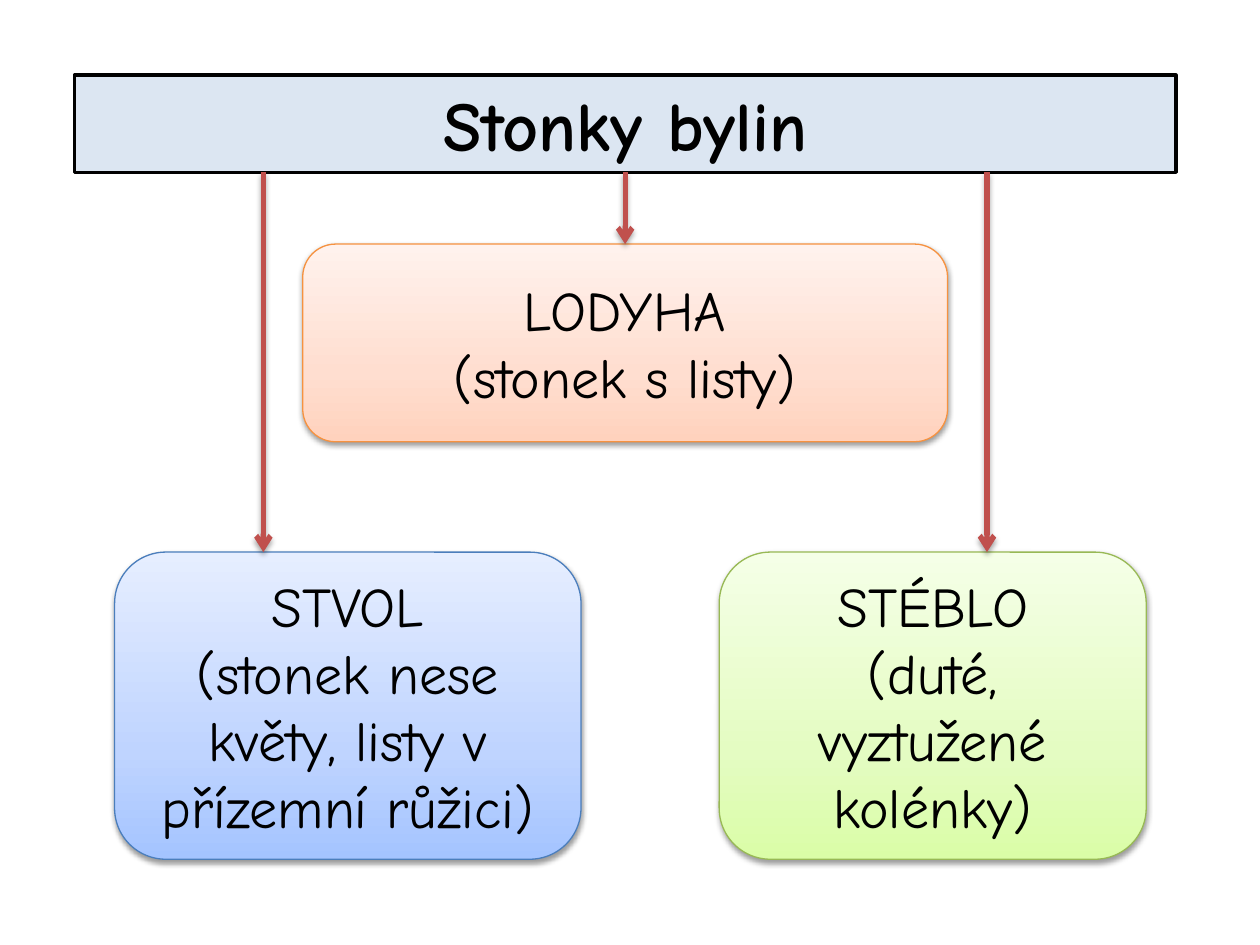
from copy import deepcopy
from dataclasses import dataclass

from lxml import etree
from pptx import Presentation
from pptx.dml.color import RGBColor
from pptx.enum.shapes import MSO_CONNECTOR, MSO_SHAPE
from pptx.enum.text import MSO_ANCHOR, MSO_AUTO_SIZE, PP_ALIGN
from pptx.oxml.ns import qn
from pptx.util import Pt

ROUNDED = MSO_SHAPE.ROUNDED_RECTANGLE
STRAIGHT = MSO_CONNECTOR.STRAIGHT
TOP, MIDDLE = MSO_ANCHOR.TOP, MSO_ANCHOR.MIDDLE
CENTER = PP_ALIGN.CENTER
NO_AUTOFIT = MSO_AUTO_SIZE.NONE

FONT = "Comic Neue"
TITLE_ONLY = 5
GRADIENT_POSITIONS = (0, 0.35, 1)
LOWER_TOP, LOWER_HEIGHT = 315.5, 175.5
UPPER_TOP = 139.5
TITLE_LEFT, TITLE_TOP, TITLE_WIDTH, TITLE_HEIGHT = 42.5, 43, 629.5, 55.5
TITLE_BOTTOM = TITLE_TOP + TITLE_HEIGHT

COLORS = {
    "black": "000000",
    "title": "DCE6F2",
    "arrow": "C0504D",
    "blue line": "4B7EBC",
    "orange line": "F69240",
    "green line": "98B955",
}
GRADIENTS = {
    "blue": ("A4C4FF", "BFD4FF", "E6EEFF"),
    "orange": ("FFD2BD", "FFDED0", "FFF2ED"),
    "green": ("DAFDA7", "E4FCC2", "F5FFE7"),
}


@dataclass
class StemBox:
    lines: tuple[str, str]
    color: str
    left: float
    top: float
    width: float
    height: float
    arrow_x: float


STEM_BOXES = (
    StemBox(("STVOL", "(stonek nese květy, listy v přízemní růžici)"),
            "blue", 65.5, LOWER_TOP, 266.5, LOWER_HEIGHT, 150.5),
    StemBox(("LODYHA", "(stonek s listy)"),
            "orange", 173, UPPER_TOP, 368.5, 113, 357.25),
    StemBox(("STÉBLO", "(duté, vyztužené kolénky)"),
            "green", 411, LOWER_TOP, 244, LOWER_HEIGHT, 564),
)


def rgb(name: str) -> RGBColor:
    return RGBColor.from_string(COLORS[name])


def set_line(shape, color: str, width: float) -> None:
    shape.line.color.rgb = rgb(color)
    shape.line.width = Pt(width)


def write_lines(shape, lines: tuple[str, ...], size: float, bold: bool, anchor) -> None:
    frame = shape.text_frame
    frame.text = "\n".join(lines)
    frame.word_wrap = True
    frame.auto_size = NO_AUTOFIT
    frame.vertical_anchor = anchor
    for paragraph in frame.paragraphs:
        paragraph.alignment = CENTER
        paragraph.font.name = FONT
        paragraph.font.size = Pt(size)
        paragraph.font.bold = bold
        paragraph.font.color.rgb = rgb("black")


def add_shadow(properties, distance: float, opacity: int) -> None:
    effects = properties.find(qn("a:effectLst"))
    if effects is None:
        effects = etree.SubElement(properties, qn("a:effectLst"))
    shadow = etree.SubElement(
        effects, qn("a:outerShdw"), blurRad=str(Pt(3.1)), dist=str(Pt(distance)),
        dir="5400000", rotWithShape="0")
    color = etree.SubElement(shadow, qn("a:srgbClr"), val=COLORS["black"])
    etree.SubElement(color, qn("a:alpha"), val=str(opacity * 1000))


def fill_gradient(shape, colors: tuple[str, ...]) -> None:
    shape.fill.gradient()
    shape.fill.gradient_angle = 90
    stop_list = shape.element.spPr.find(qn("a:gradFill")).find(qn("a:gsLst"))
    stop_list.append(deepcopy(stop_list[0]))
    for stop, position, color in zip(shape.fill.gradient_stops, GRADIENT_POSITIONS, colors):
        stop.position = position
        stop.color.rgb = RGBColor.from_string(color)


def add_title(slide) -> None:
    title = slide.shapes.title
    title.left, title.top = Pt(TITLE_LEFT), Pt(TITLE_TOP)
    title.width, title.height = Pt(TITLE_WIDTH), Pt(TITLE_HEIGHT)
    title.fill.solid()
    title.fill.fore_color.rgb = rgb("title")
    set_line(title, "black", 2)
    write_lines(title, ("Stonky bylin",), 40, True, TOP)


def add_stem_box(slide, box: StemBox) -> None:
    shape = slide.shapes.add_shape(
        ROUNDED, Pt(box.left), Pt(box.top), Pt(box.width), Pt(box.height))
    fill_gradient(shape, GRADIENTS[box.color])
    set_line(shape, f"{box.color} line", 0.75)
    shape.shadow.inherit = False
    add_shadow(shape.element.spPr, 1.6, 38)
    write_lines(shape, box.lines, 32, False, MIDDLE)


def add_arrow(slide, box: StemBox) -> None:
    arrow = slide.shapes.add_connector(
        STRAIGHT, Pt(box.arrow_x), Pt(TITLE_BOTTOM), Pt(box.arrow_x), Pt(box.top))
    set_line(arrow, "arrow", 3)
    properties = arrow.element.spPr
    etree.SubElement(properties.find(qn("a:ln")), qn("a:tailEnd"), type="arrow")
    add_shadow(properties, 1.8, 35)


def main() -> None:
    presentation = Presentation()
    presentation.slide_width, presentation.slide_height = Pt(720), Pt(540)
    slide = presentation.slides.add_slide(presentation.slide_layouts[TITLE_ONLY])
    add_title(slide)
    for box in STEM_BOXES:
        add_stem_box(slide, box)
    for box in STEM_BOXES:
        add_arrow(slide, box)
    presentation.save("out.pptx")


if __name__ == "__main__":
    main()
